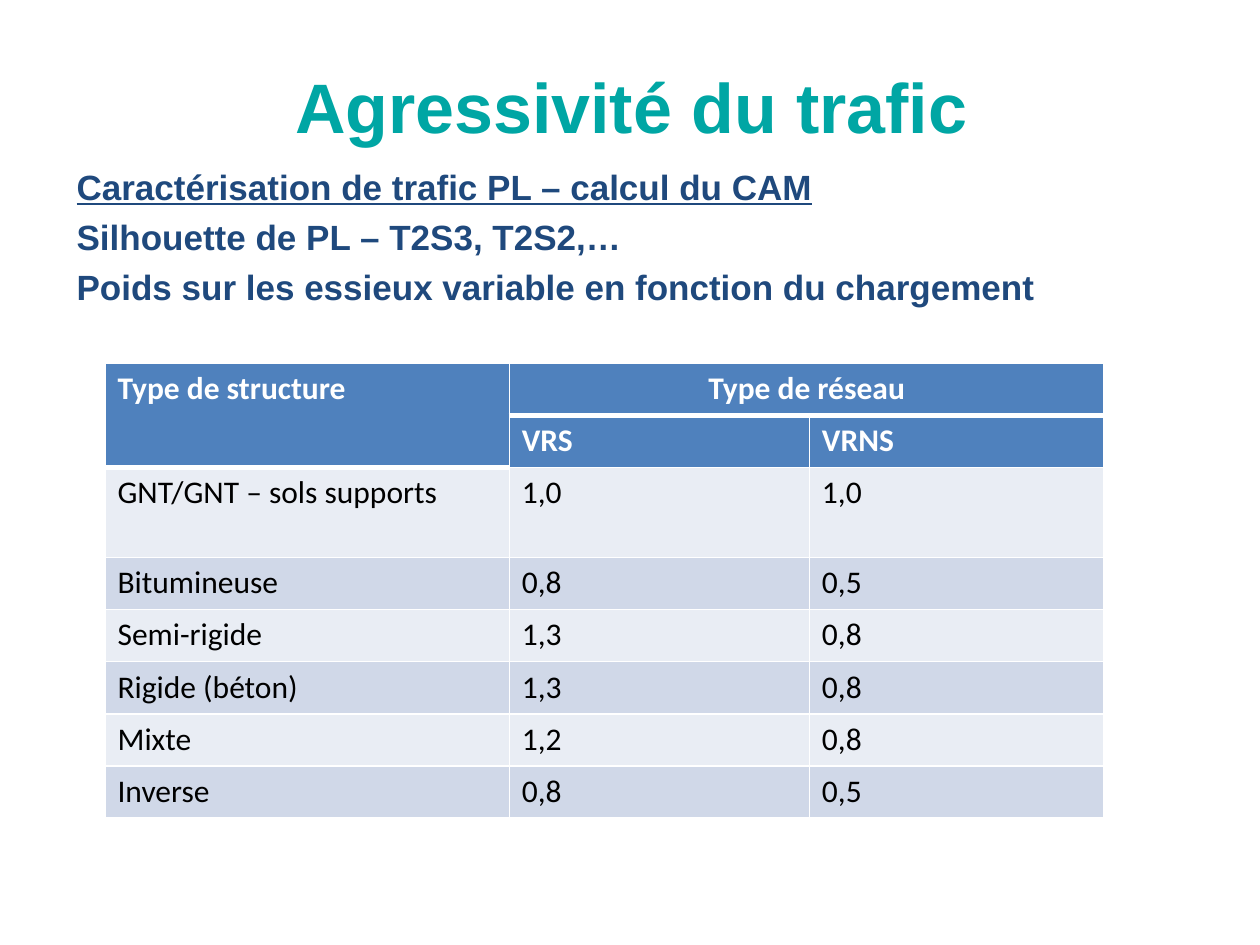
from dataclasses import dataclass

from lxml.etree import SubElement
from pptx import Presentation
from pptx.dml.color import RGBColor as Rgb
from pptx.enum.text import MSO_ANCHOR as Anchor, PP_ALIGN as Align
from pptx.oxml.ns import qn
from pptx.util import Pt

COLORS = {
    "title": "00A6A4", "body": "1F497D", "white": "FFFFFF", "black": "000000",
    "header": "4F81BD", "light": "E9EDF4", "dark": "D0D8E8",
}
FORMATS = {
    "title": {"name": "Arial", "size": Pt(40), "bold": True},
    "heading": {"name": "Arial", "size": Pt(20), "bold": True, "underline": True},
    "body": {"name": "Arial", "size": Pt(20), "bold": True},
    "header": {"name": "Calibri", "size": Pt(18), "bold": True},
    "value": {"name": "Calibri", "size": Pt(18), "bold": False},
}


@dataclass
class Line:
    text: str
    style: str
    color: str
    align: Align = Align.LEFT


@dataclass
class TextBlock:
    left: float
    top: float
    width: float
    height: float
    lines: list[Line]
    anchor: Anchor = Anchor.TOP
    inset_top: float = 3.6


def write_line(paragraph, line: Line) -> None:
    paragraph.alignment = line.align
    run = paragraph.add_run()
    run.text = line.text
    for attribute, value in FORMATS[line.style].items():
        setattr(run.font, attribute, value)
    run.font.color.rgb = Rgb.from_string(COLORS[line.color])


def draw_block(slide, block: TextBlock) -> None:
    box = slide.shapes.add_textbox(
        Pt(block.left), Pt(block.top), Pt(block.width), Pt(block.height))
    frame = box.text_frame
    frame.word_wrap = True
    frame.vertical_anchor = block.anchor
    frame.margin_top = Pt(block.inset_top)
    for index, line in enumerate(block.lines):
        paragraph = frame.add_paragraph() if index else frame.paragraphs[0]
        if index:
            paragraph.space_before = Pt(4.7)
        write_line(paragraph, line)


def set_borders(cell, widths: dict[str, float]) -> None:
    properties = cell._tc.get_or_add_tcPr()
    for side, width in widths.items():
        edge = SubElement(properties, qn(f"a:ln{side}"), w=str(Pt(width)))
        fill = SubElement(edge, qn("a:solidFill"))
        SubElement(fill, qn("a:srgbClr"), val=COLORS["white"])


def draw_cell(cell, line: Line, fill: str, top: float, bottom: float) -> None:
    set_borders(cell, {"L": 1, "R": 1, "T": top, "B": bottom})
    cell.fill.solid()
    cell.fill.fore_color.rgb = Rgb.from_string(COLORS[fill])
    if line.text:
        write_line(cell.text_frame.paragraphs[0], line)


# Content
TITLE = TextBlock(36.7, 15.1, 648, 90, [
    Line("Agressivité du trafic", "title", "title", Align.CENTER)], Anchor.MIDDLE)
TRAFFIC = TextBlock(36.7, 88.5, 648, 420, [
    Line("Caractérisation de trafic PL – calcul du CAM", "heading", "body"),
    Line("Silhouette de PL – T2S3, T2S2,…", "body", "body"),
    Line("Poids sur les essieux variable en fonction du chargement", "body", "body"),
], inset_top=6)

STRUCTURES = [
    ("Type de structure", "Type de réseau", ""),
    ("", "VRS", "VRNS"),
    ("GNT/GNT – sols supports", "1,0", "1,0"),
    ("Bitumineuse", "0,8", "0,5"),
    ("Semi-rigide", "1,3", "0,8"),
    ("Rigide (béton)", "1,3", "0,8"),
    ("Mixte", "1,2", "0,8"),
    ("Inverse", "0,8", "0,5"),
]
HEADER_ROWS = 2
COLUMN_WIDTHS = [231, 171.5, 168.5]
ROW_HEIGHT, TALL_ROW_HEIGHT = 29.8, 51.5
THICK_BELOW = {(0, 0), (1, 0), (0, 1), (0, 2)}


def draw_structures(slide) -> None:
    heights = [ROW_HEIGHT] * len(STRUCTURES)
    heights[HEADER_ROWS] = TALL_ROW_HEIGHT
    table = slide.shapes.add_table(
        len(heights), len(COLUMN_WIDTHS), Pt(60), Pt(207.5),
        Pt(sum(COLUMN_WIDTHS)), Pt(sum(heights))).table
    table.first_row = table.horz_banding = False
    for column, width in zip(table.columns, COLUMN_WIDTHS):
        column.width = Pt(width)
    for row, height in zip(table.rows, heights):
        row.height = Pt(height)

    # Header spans
    table.cell(0, 0).merge(table.cell(1, 0))
    table.cell(0, 1).merge(table.cell(0, 2))

    for r, texts in enumerate(STRUCTURES):
        is_header = r < HEADER_ROWS
        fill = "header" if is_header else ("light", "dark")[r % 2]
        style, color = ("header", "white") if is_header else ("value", "black")
        for c, text in enumerate(texts):
            align = Align.CENTER if (r, c) == (0, 1) else Align.LEFT
            draw_cell(table.cell(r, c), Line(text, style, color, align), fill,
                      top=3 if (r - 1, c) in THICK_BELOW else 1,
                      bottom=3 if (r, c) in THICK_BELOW else 1)


def main() -> None:
    deck = Presentation()
    deck.slide_width, deck.slide_height = Pt(720), Pt(540)
    slide = deck.slides.add_slide(deck.slide_layouts[6])
    for block in (TITLE, TRAFFIC):
        draw_block(slide, block)
    draw_structures(slide)
    deck.save("out.pptx")


if __name__ == "__main__":
    main()
